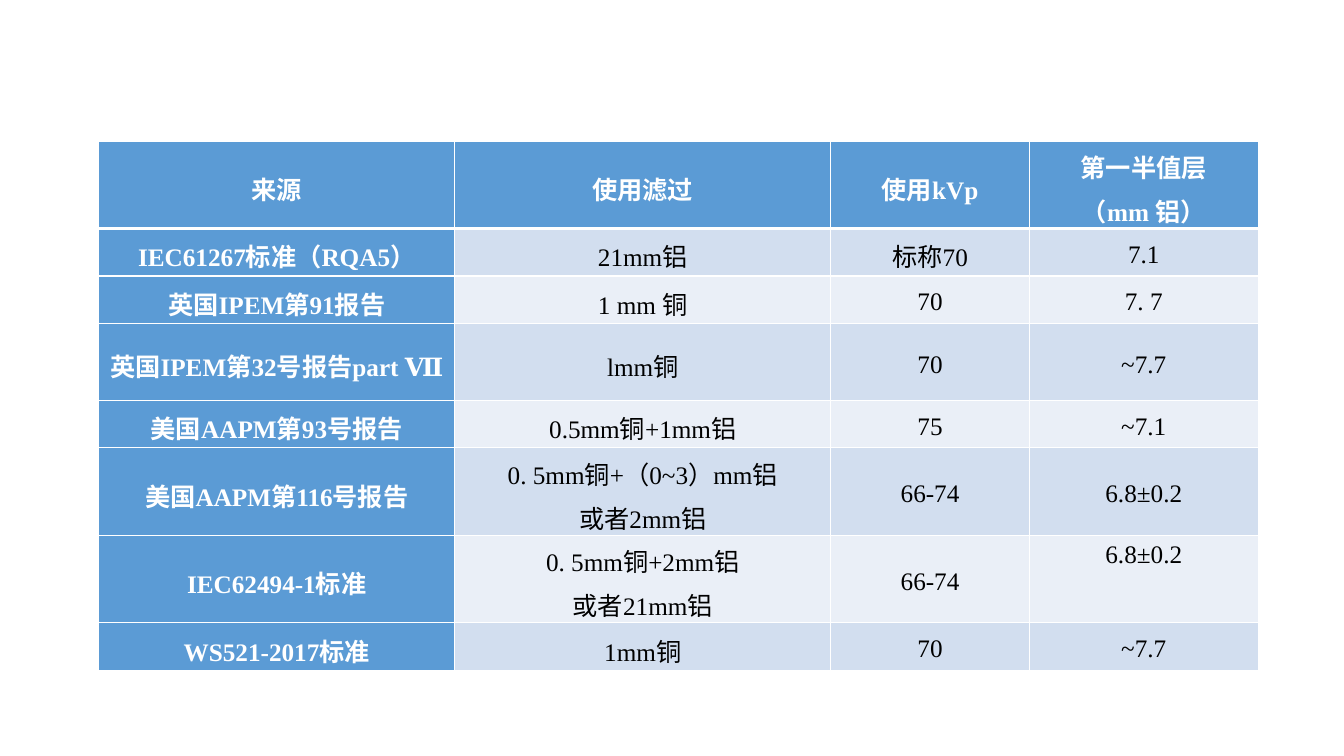
from dataclasses import dataclass

import pptx
import pptx.dml.color
import pptx.enum.text
import pptx.oxml
import pptx.oxml.ns
import pptx.table
import pptx.util
from pptx.dml.color import RGBColor
from pptx.util import Inches

WHITE = RGBColor(0xFF, 0xFF, 0xFF)
BLACK = RGBColor(0x00, 0x00, 0x00)
BLUE = RGBColor(0x5B, 0x9B, 0xD5)
BANDS = (RGBColor(0xD2, 0xDE, 0xEF), RGBColor(0xEA, 0xEF, 0xF7))
FONT = "Times New Roman"
MIDDLE = pptx.enum.text.MSO_ANCHOR.MIDDLE
TOP = pptx.enum.text.MSO_ANCHOR.TOP

COLUMN_WIDTHS = (3.53, 3.73, 1.97, 2.27)
ROW_HEIGHT = 0.47


@dataclass(frozen=True)
class BeamQuality:
    source: str
    filtration: str
    kvp: str
    half_value_layer: str
    layer_anchor: pptx.enum.text.MSO_ANCHOR = MIDDLE


HEADER = BeamQuality("来源", "使用滤过", "使用kVp", "第一半值层\n（mm 铝）")
QUALITIES = (
    BeamQuality("IEC61267标准（RQA5）", "21mm铝", "标称70", "7.1"),
    BeamQuality("英国IPEM第91报告", "1 mm 铜", "70", "7. 7"),
    BeamQuality("英国IPEM第32号报告part Ⅶ", "lmm铜", "70", "~7.7"),
    BeamQuality("美国AAPM第93号报告", "0.5mm铜+1mm铝", "75", "~7.1"),
    BeamQuality("美国AAPM第116号报告", "0. 5mm铜+（0~3）mm铝\n或者2mm铝", "66-74", "6.8±0.2"),
    BeamQuality("IEC62494-1标准", "0. 5mm铜+2mm铝\n或者21mm铝", "66-74", "6.8±0.2", TOP),
    BeamQuality("WS521-2017标准", "1mm铜", "70", "~7.7"),
)


def write_text(cell: pptx.table._Cell, text: str, *, color: RGBColor, bold: bool,
               size: float = 18, anchor: pptx.enum.text.MSO_ANCHOR = MIDDLE) -> None:
    cell.margin_left = cell.margin_right = Inches(0.07)
    cell.margin_top = cell.margin_bottom = 0
    cell.vertical_anchor = anchor
    cell.text_frame.text = text
    for paragraph in cell.text_frame.paragraphs:
        paragraph.alignment = pptx.enum.text.PP_ALIGN.CENTER
        paragraph.line_spacing = 1.2
        for run in paragraph.runs:
            run.font.name = FONT
            run.font.size = pptx.util.Pt(size)
            run.font.bold = bold
            run.font.color.rgb = color


def set_borders(cell: pptx.table._Cell, *, top: float = 1, bottom: float = 1) -> None:
    """Draw white borders, with widths in points; call before filling the cell."""
    properties = cell._tc.get_or_add_tcPr()
    for side, width in (("L", 1), ("R", 1), ("T", top), ("B", bottom)):
        properties.append(pptx.oxml.parse_xml(
            f'<a:ln{side} {pptx.oxml.ns.nsdecls("a")} w="{pptx.util.Pt(width)}">'
            f'<a:solidFill><a:srgbClr val="{WHITE}"/></a:solidFill></a:ln{side}>'))


def fill_row(table: pptx.table.Table, row: int, quality: BeamQuality) -> None:
    texts = (quality.source, quality.filtration, quality.kvp, quality.half_value_layer)
    for column, text in enumerate(texts):
        cell = table.cell(row, column)
        heading = row == 0 or column == 0
        last = column == len(texts) - 1
        write_text(cell, text, color=WHITE if heading else BLACK, bold=heading,
                   anchor=quality.layer_anchor if last else MIDDLE)
        set_borders(cell, top=3 if row == 1 else 1, bottom=3 if row == 0 else 1)
        cell.fill.solid()
        cell.fill.fore_color.rgb = BLUE if heading else BANDS[(row - 1) % 2]


def main() -> None:
    presentation = pptx.Presentation()
    presentation.slide_width = Inches(13.33)
    presentation.slide_height = Inches(7.5)
    slide = presentation.slides.add_slide(presentation.slide_layouts[6])

    rows = (HEADER, *QUALITIES)
    table = slide.shapes.add_table(
        len(rows), len(COLUMN_WIDTHS), Inches(0.98), Inches(1.4),
        Inches(sum(COLUMN_WIDTHS)), Inches(ROW_HEIGHT * len(rows))).table
    table.first_col = True
    for column, width in zip(table.columns, COLUMN_WIDTHS):
        column.width = Inches(width)
    for row, quality in enumerate(rows):
        table.rows[row].height = Inches(ROW_HEIGHT)
        fill_row(table, row, quality)

    presentation.save("out.pptx")


if __name__ == "__main__":
    main()
